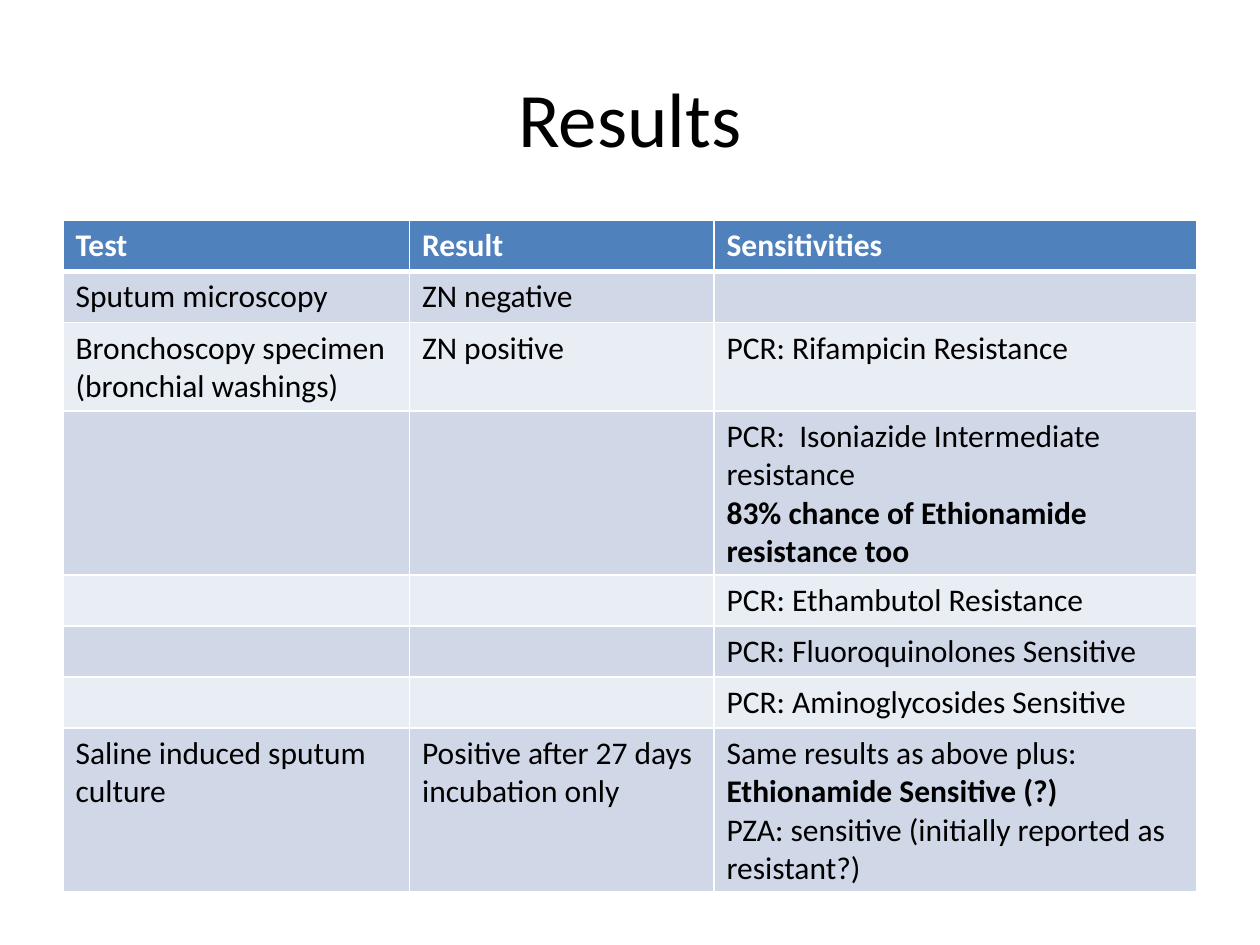
"""Build the Results slide: a title above a table of tests and sensitivities."""
import dataclasses

import lxml.etree
import pptx
import pptx.dml.color
import pptx.enum.text
import pptx.oxml.ns
import pptx.util

Pt = pptx.util.Pt


@dataclasses.dataclass(frozen=True)
class Theme:
    font: str = "Calibri"
    title_size: int = 44
    body_size: int = 18
    text: str = "000000"
    white: str = "FFFFFF"
    header_fill: str = "4F81BD"
    band_fills: tuple = ("E9EDF4", "D0D8E8")


theme = Theme()


def write_text(frame, text, *, size=theme.body_size, color=theme.text, bold=False, align="LEFT"):
    """Write one paragraph per line, with the parts between ** marks in bold."""
    for index, line in enumerate(text.split("\n")):
        paragraph = frame.add_paragraph() if index else frame.paragraphs[0]
        paragraph.alignment = getattr(pptx.enum.text.PP_ALIGN, align)
        for position, part in enumerate(line.split("**")):
            if part:
                run = paragraph.add_run()
                run.text = part
                run.font.name = theme.font
                run.font.size = Pt(size)
                run.font.bold = bold or position % 2 == 1
                run.font.color.rgb = pptx.dml.color.RGBColor.from_string(color)


def add_border(cell, side, width):
    """Draw a solid white border on one side of a cell."""
    qualify = pptx.oxml.ns.qn
    properties = cell._tc.get_or_add_tcPr()
    line = lxml.etree.SubElement(properties, qualify(f"a:ln{side}"), w=str(Pt(width)))
    fill = lxml.etree.SubElement(line, qualify("a:solidFill"))
    lxml.etree.SubElement(fill, qualify("a:srgbClr"), val=theme.white)


presentation = pptx.Presentation()
presentation.slide_width = Pt(720)
presentation.slide_height = Pt(540)
slide = presentation.slides.add_slide(presentation.slide_layouts[6])

title = slide.shapes.add_textbox(Pt(36), Pt(21.6), Pt(648), Pt(90))
title.text_frame.word_wrap = True
title.text_frame.vertical_anchor = pptx.enum.text.MSO_ANCHOR.MIDDLE
write_text(title.text_frame, "Results", size=theme.title_size, align="CENTER")

rows = [
    ("Test", "Result", "Sensitivities"),
    ("Sputum microscopy", "ZN negative", ""),
    ("Bronchoscopy specimen (bronchial washings)", "ZN positive", "PCR: Rifampicin Resistance"),
    ("", "", "PCR:  Isoniazide Intermediate resistance\n**83% chance of Ethionamide resistance too**"),
    ("", "", "PCR: Ethambutol Resistance"),
    ("", "", "PCR: Fluoroquinolones Sensitive"),
    ("", "", "PCR: Aminoglycosides Sensitive"),
    (
        "Saline induced sputum culture",
        "Positive after 27 days incubation only",
        "Same results as above plus: **Ethionamide Sensitive (?)**\n"
        "PZA: sensitive (initially reported as resistant?)",
    ),
]
column_widths = [198, 174, 276]
row_height = 29.2

table = slide.shapes.add_table(
    len(rows), len(column_widths), Pt(36), Pt(126), Pt(sum(column_widths)), Pt(row_height * len(rows))
).table
for column, width in zip(table.columns, column_widths):
    column.width = Pt(width)

for row_index, row in enumerate(rows):
    table.rows[row_index].height = Pt(row_height)
    is_header = row_index == 0
    fill_color = theme.header_fill if is_header else theme.band_fills[row_index % 2]
    for column_index, text in enumerate(row):
        cell = table.cell(row_index, column_index)
        for side in "LRTB":
            thick = (is_header and side == "B") or (row_index == 1 and side == "T")
            add_border(cell, side, 3 if thick else 1)
        cell.fill.solid()
        cell.fill.fore_color.rgb = pptx.dml.color.RGBColor.from_string(fill_color)
        write_text(cell.text_frame, text, color=theme.white if is_header else theme.text, bold=is_header)

presentation.save("out.pptx")
